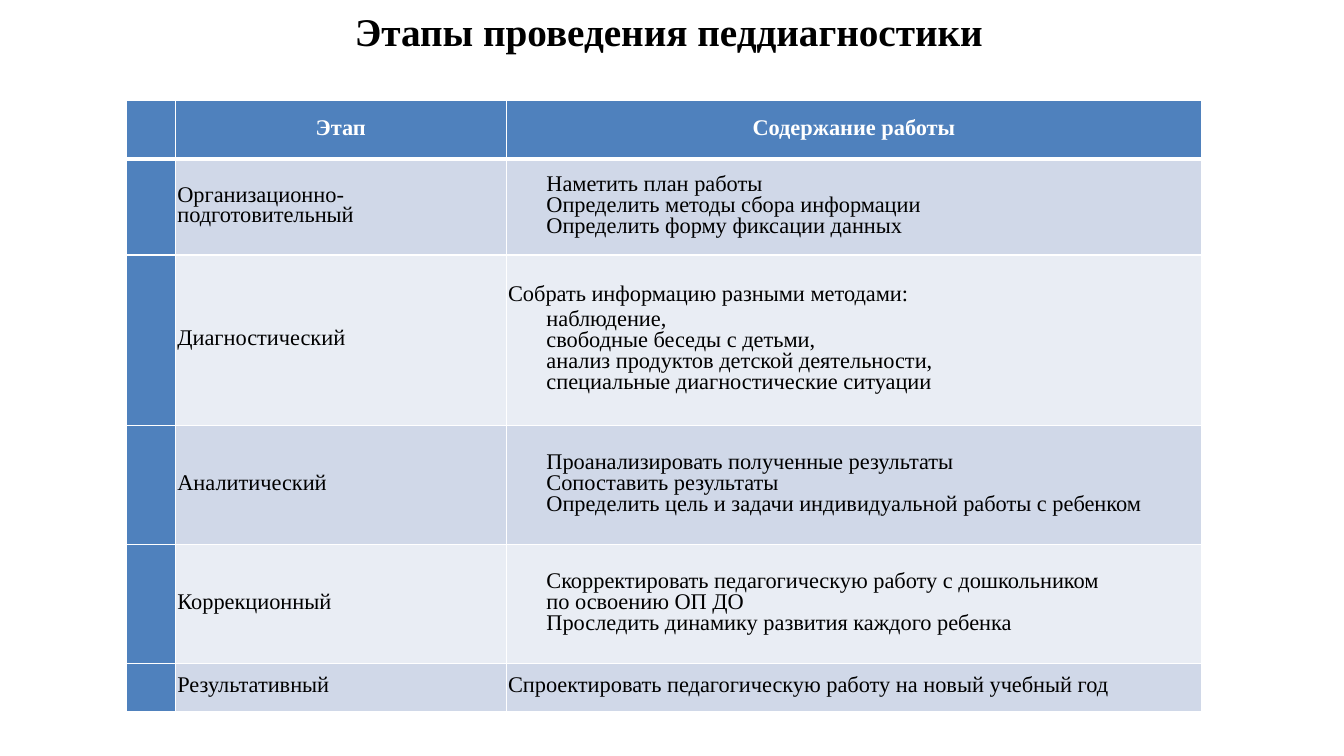
from lxml.etree import SubElement
from pptx import Presentation
from pptx.dml.color import RGBColor
from pptx.enum.text import MSO_ANCHOR, PP_ALIGN
from pptx.oxml.ns import qn
from pptx.util import Inches, Pt

FONT = "Times New Roman"
NBSP = chr(160)
COLORS = {
    "accent": "4F81BD",
    "band_dark": "D0D8E8",
    "band_light": "E9EDF4",
    "white": "FFFFFF",
    "black": "000000",
}
COL_WIDTHS = [0.49, 3.28, 6.9]
ROW_HEIGHTS = [0.58, 0.95, 1.69, 1.18, 1.18, 0.48]
HEADERS = ["Этап", "Содержание работы"]
STAGES = [
    ("Организационно-подготовительный", None, [
        "Наметить план работы",
        "Определить методы сбора информации",
        "Определить форму фиксации данных",
    ]),
    ("Диагностический", "Собрать информацию разными методами:", [
        "наблюдение,",
        f"свободные беседы с{NBSP}детьми,",
        "анализ продуктов детской деятельности,",
        "специальные диагностические ситуации",
    ]),
    ("Аналитический", None, [
        "Проанализировать полученные результаты",
        "Сопоставить результаты",
        f"Определить цель и{NBSP}задачи индивидуальной работы с{NBSP}ребенком",
    ]),
    ("Коррекционный", None, [
        f"Скорректировать педагогическую работу с{NBSP}дошкольником "
        f"по{NBSP}освоению ОП{NBSP}ДО",
        "Проследить динамику развития каждого ребенка",
    ]),
    ("Результативный", f"Спроектировать педагогическую работу на{NBSP}новый учебный год", []),
]


def rgb(name):
    """Return the named colour."""
    return RGBColor.from_string(COLORS[name])


def style_runs(p, size, color, bold):
    """Format every run of a paragraph."""
    for r in p.runs:
        r.font.name = FONT
        r.font.size = Pt(size)
        r.font.bold = bold
        r.font.color.rgb = rgb(color)


def add_bullet(p):
    """Give a paragraph a Wingdings clock bullet with a hanging indent."""
    pPr = p._p.get_or_add_pPr()
    pPr.set("marL", str(Inches(0.38)))
    pPr.set("indent", str(-Inches(0.38)))
    SubElement(pPr, qn("a:buFont"), typeface="Wingdings", pitchFamily="2", charset="2")
    SubElement(pPr, qn("a:buChar"), char="·")
    tabs = SubElement(pPr, qn("a:tabLst"))
    SubElement(tabs, qn("a:tab"), pos=str(Inches(0.5)), algn="l")


def add_borders(cell, bottom):
    """Draw white borders round a cell."""
    tcPr = cell._tc.get_or_add_tcPr()
    for i, (side, width) in enumerate([("L", 1), ("R", 1), ("T", 1), ("B", bottom)]):
        ln = SubElement(tcPr, qn(f"a:ln{side}"), w=str(Pt(width)))
        fill = SubElement(ln, qn("a:solidFill"))
        SubElement(fill, qn("a:srgbClr"), val=COLORS["white"])
        tcPr.insert(i, ln)


def format_cell(cell, fill, bottom=1):
    """Set the fill, margins, anchor and borders of a cell."""
    cell.fill.solid()
    cell.fill.fore_color.rgb = rgb(fill)
    cell.vertical_anchor = MSO_ANCHOR.MIDDLE
    cell.margin_left = cell.margin_right = Inches(0.02)
    cell.margin_top = cell.margin_bottom = Inches(0.02)
    add_borders(cell, bottom)


def fill_text(cell, lines, bullets=(), header=False):
    """Write plain lines and then bulleted lines into a cell."""
    tf = cell.text_frame
    items = [(line, False) for line in lines] + [(line, True) for line in bullets]
    for i, (line, bulleted) in enumerate(items):
        p = tf.add_paragraph() if i else tf.paragraphs[0]
        p.text = line
        if bulleted:
            add_bullet(p)
            p.line_spacing = Pt(15)
        else:
            p.line_spacing = Pt(14.6)
            p.space_after = Pt(3)
        p.alignment = PP_ALIGN.CENTER if header else PP_ALIGN.LEFT
        style_runs(p, 16, "white" if header else "black", header)


def add_title(s, text):
    """Add the slide heading."""
    tf = s.shapes.add_textbox(Inches(3.52), Inches(0.29), Inches(8.23), Inches(0.28)).text_frame
    tf.word_wrap = True
    tf.margin_left = tf.margin_right = tf.margin_bottom = 0
    tf.margin_top = Inches(0.01)
    p = tf.paragraphs[0]
    p.text = text
    p.line_spacing = Pt(17)
    style_runs(p, 28, "black", True)


def add_stage_table(s):
    """Add the table of stages and their content."""
    table = s.shapes.add_table(len(ROW_HEIGHTS), len(COL_WIDTHS), Inches(1.25), Inches(1),
                               Inches(sum(COL_WIDTHS)), Inches(sum(ROW_HEIGHTS))).table
    table.first_row = table.horz_banding = False
    for col, width in zip(table.columns, COL_WIDTHS):
        col.width = Inches(width)
    for i, height in enumerate(ROW_HEIGHTS):
        table.rows[i].height = Inches(height)
        band = "band_dark" if i % 2 else "band_light"
        for j in range(len(COL_WIDTHS)):
            is_accent = i == 0 or j == 0
            format_cell(table.cell(i, j), "accent" if is_accent else band, 1 if i else 3)
    for j, header in enumerate(HEADERS, 1):
        fill_text(table.cell(0, j), [header], header=True)
    for i, (stage, intro, tasks) in enumerate(STAGES, 1):
        fill_text(table.cell(i, 1), [stage])
        fill_text(table.cell(i, 2), [intro] if intro else [], tasks)


def main():
    """Build and save the slide."""
    prs = Presentation()
    prs.slide_width, prs.slide_height = Inches(13.33), Inches(7.5)
    s = prs.slides.add_slide(prs.slide_layouts[6])
    add_title(s, "Этапы проведения педдиагностики")
    add_stage_table(s)
    prs.save("out.pptx")


if __name__ == "__main__":
    main()
